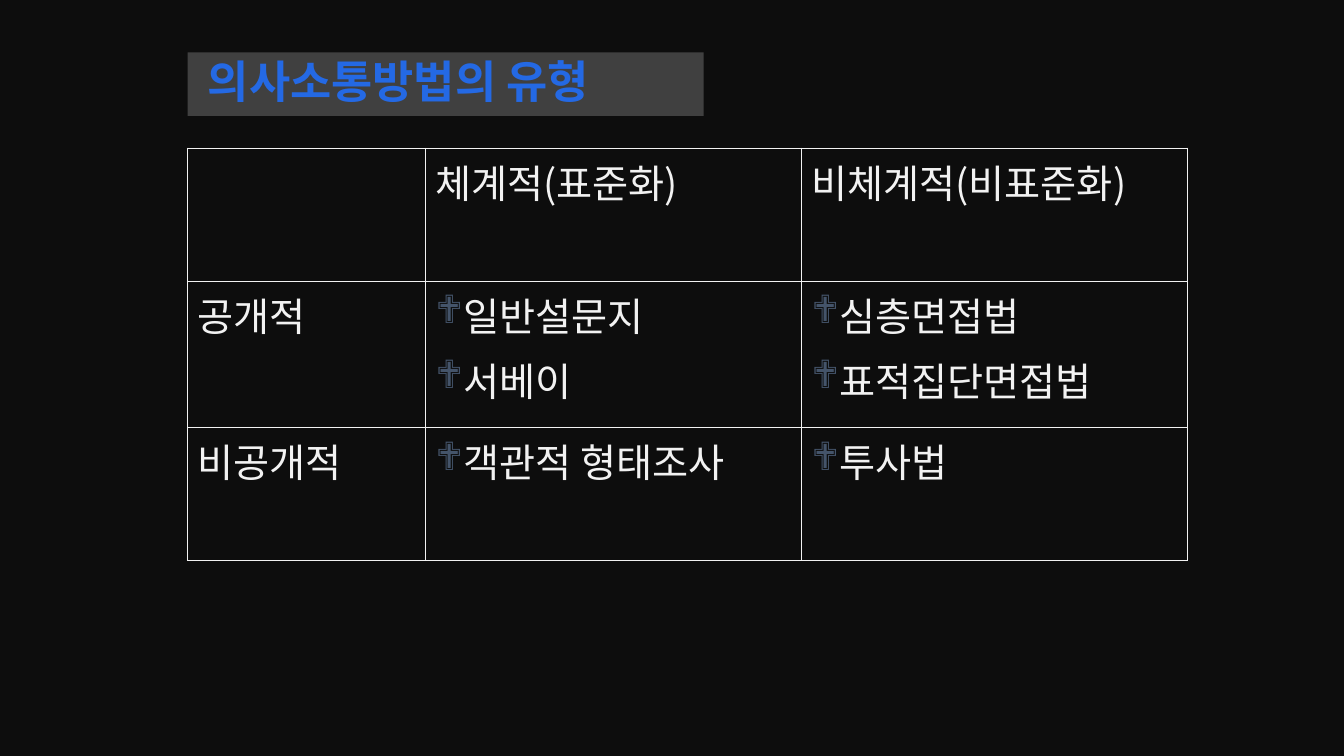
from lxml import etree
from pptx import Presentation
from pptx.dml.color import RGBColor
from pptx.enum.text import MSO_ANCHOR, PP_ALIGN
from pptx.oxml.ns import qn
from pptx.util import Inches, Pt

MIDDLE = MSO_ANCHOR.MIDDLE
LEFT = PP_ALIGN.LEFT
TITLE = " 의사소통방법의 유형"
ROWS = [
    [[], ["체계적(표준화)"], ["비체계적(비표준화)"]],
    [["공개적"], ["일반설문지", "서베이"], ["심층면접법", "표적집단면접법"]],
    [["비공개적"], ["객관적 형태조사"], ["투사법"]],
]
WIDTHS = [2.36, 3.73, 3.83]
HEIGHTS = [1.32, 1.45, 1.32]
EDGE = 1.86
KOREAN = "Noto Sans CJK KR"
LIGHT = "F2F2F2"


def color(code):
    return RGBColor.from_string(code)


def add(parent, tag, **attrs):
    return etree.SubElement(parent, qn(tag), attrs)


def write(frame, lines, size=28, font=KOREAN, ink=LIGHT, bold=False,
          before=5.6, spacing=1.0, bullet=None):
    for i, line in enumerate(lines):
        para = frame.add_paragraph() if i else frame.paragraphs[0]
        para.alignment = LEFT
        para.space_before = Pt(before)
        para.line_spacing = spacing
        run = para.add_run()
        run.text = line
        run.font.size = Pt(size)
        run.font.name = font
        run.font.bold = bold
        run.font.color.rgb = color(ink)
        if font == KOREAN:
            add(run._r.get_or_add_rPr(), "a:ea", typeface=font)
        if bullet:
            props = para._p.get_or_add_pPr()
            add(add(props, "a:buClr"), "a:srgbClr", val=bullet)
            add(props, "a:buFont", typeface="Wingdings")
            add(props, "a:buChar", char="❖")


def border(cell, code, width):
    props = cell._tc.get_or_add_tcPr()
    for i, side in enumerate("LRTB"):
        line = add(props, "a:ln" + side, w=str(Pt(width)))
        add(add(line, "a:solidFill"), "a:srgbClr", val=code)
        props.insert(i, line)


def main():
    deck = Presentation()
    deck.slide_width, deck.slide_height = Inches(13.33), Inches(7.5)
    slide = deck.slides.add_slide(deck.slide_layouts[5])
    slide.background.fill.solid()
    slide.background.fill.fore_color.rgb = color("0D0D0D")

    title = slide.shapes.title
    title.left, title.top = Inches(EDGE), Inches(0.52)
    title.width, title.height = Inches(5.12), Inches(0.63)
    title.fill.solid()
    title.fill.fore_color.rgb = color("404040")
    title.text_frame.vertical_anchor = MIDDLE
    write(title.text_frame, [TITLE], size=32, font="Calibri", ink="2469E4",
          bold=True, before=0, spacing=0.9)

    table = slide.shapes.add_table(
        len(HEIGHTS), len(WIDTHS), Inches(EDGE), Inches(1.47),
        Inches(sum(WIDTHS)), Inches(sum(HEIGHTS))).table
    table.first_row = table.horz_banding = False
    for col, width in zip(table.columns, WIDTHS):
        col.width = Inches(width)
    for r, (row, height) in enumerate(zip(ROWS, HEIGHTS)):
        table.rows[r].height = Inches(height)
        for c, lines in enumerate(row):
            cell = table.cell(r, c)
            cell.fill.background()
            border(cell, LIGHT, 1)
            write(cell.text_frame, lines, bullet="44546A" if r and c else None)

    deck.save("out.pptx")


if __name__ == "__main__":
    main()
